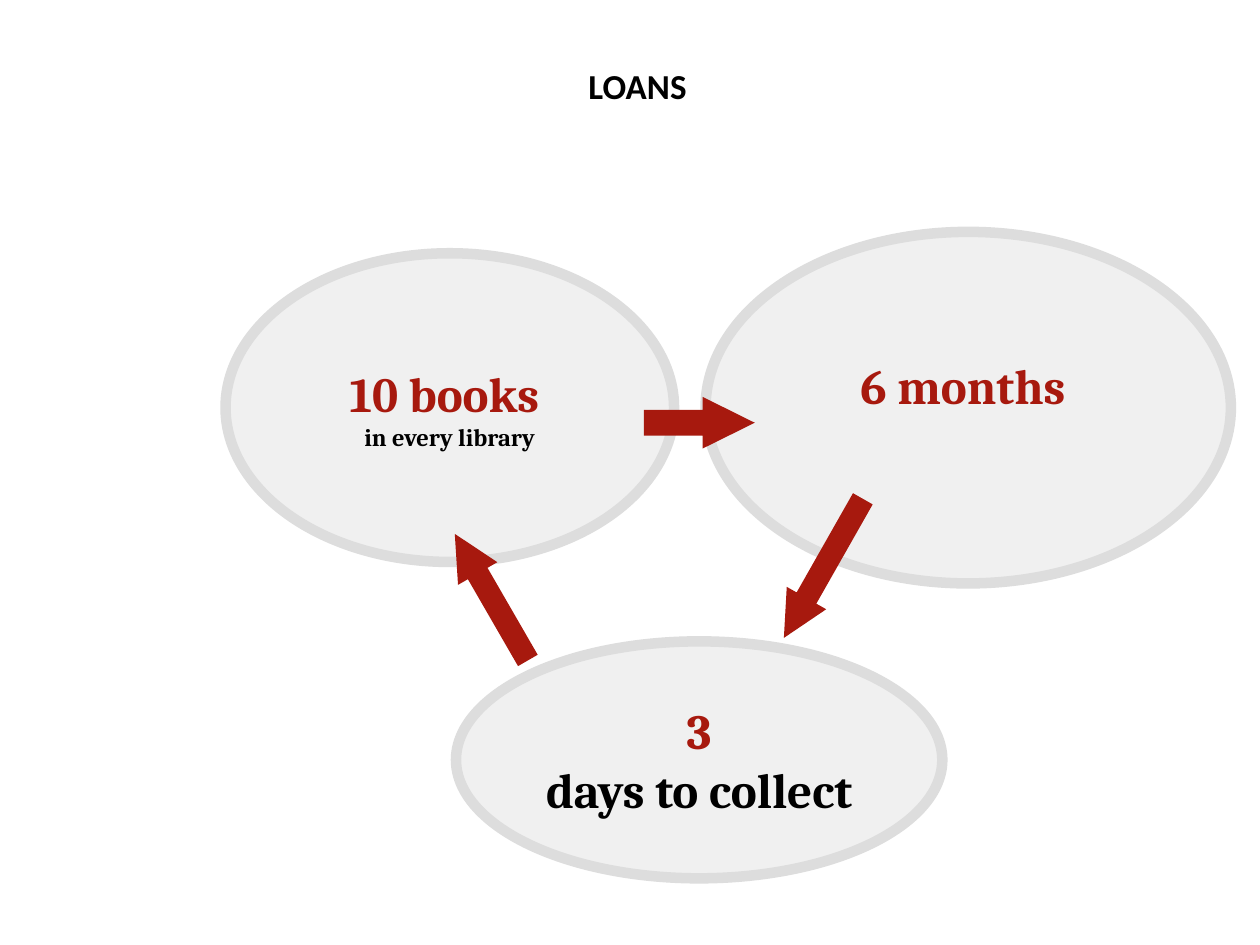
"""Build the library loans cycle slide."""
from dataclasses import dataclass

from pptx import Presentation
from pptx.dml.color import RGBColor
from pptx.enum.shapes import MSO_SHAPE as Shape
from pptx.enum.text import MSO_ANCHOR as Anchor, MSO_AUTO_SIZE as AutoSize, PP_ALIGN as Align
from pptx.slide import Slide
from pptx.util import Pt


@dataclass(frozen=True)
class Theme:
    accent: RGBColor = RGBColor(0xA7, 0x19, 0x0E)
    dark: RGBColor = RGBColor(0, 0, 0)
    fill: RGBColor = RGBColor(0xF0, 0xF0, 0xF0)
    outline: RGBColor = RGBColor(0xDD, 0xDD, 0xDD)
    outline_width: float = 6
    title_font: str = "Calibri"
    body_font: str = "Cambria"
    title_size: float = 20
    large: float = 28
    small: float = 14


@dataclass(frozen=True)
class Box:
    left: float
    top: float
    width: float
    height: float

    def lengths(self) -> tuple[Pt, Pt, Pt, Pt]:
        return Pt(self.left), Pt(self.top), Pt(self.width), Pt(self.height)


@dataclass(frozen=True)
class Line:
    text: str
    size: float
    color: RGBColor


@dataclass(frozen=True)
class Stage:
    box: Box
    lines: tuple[Line, ...]
    bottom_inset: float = 0


@dataclass(frozen=True)
class Arrow:
    box: Box
    rotation: float


THEME = Theme()

STAGES = (
    Stage(Box(128.9, 144.7, 256.3, 176.4), (
        Line("10 books ", THEME.large, THEME.accent),
        Line("in every library", THEME.small, THEME.dark))),
    Stage(Box(403.2, 132.5, 300.2, 200.9), (
        Line("6 months ", THEME.large, THEME.accent),), bottom_inset=26),
    Stage(Box(260.6, 366.5, 277.9, 135.4), (
        Line("3", THEME.large, THEME.accent),
        Line("days to collect", THEME.large, THEME.dark))),
)

ARROWS = (
    Arrow(Box(367.9, 226.8, 63.4, 29.5), 180),
    Arrow(Box(424.8, 311.8, 91.4, 25.9), 299.6),
    Arrow(Box(239, 328.3, 83.5, 25.9), 60),
)


def set_title(slide: Slide, text: str, box: Box) -> None:
    title = slide.shapes.title
    title.left, title.top, title.width, title.height = box.lengths()
    frame = title.text_frame
    frame.text = text
    frame.word_wrap = True
    frame.auto_size = AutoSize.NONE
    frame.vertical_anchor = Anchor.MIDDLE
    frame.margin_left, frame.margin_right = Pt(79.2), 0
    paragraph = frame.paragraphs[0]
    paragraph.alignment = Align.LEFT
    font = paragraph.font
    font.name, font.size, font.bold = THEME.title_font, Pt(THEME.title_size), True
    font.color.rgb = THEME.dark


def draw_stage(slide: Slide, stage: Stage) -> None:
    shape = slide.shapes.add_shape(Shape.OVAL, *stage.box.lengths())
    shape.shadow.inherit = False
    shape.fill.solid()
    shape.fill.fore_color.rgb = THEME.fill
    shape.line.color.rgb = THEME.outline
    shape.line.width = Pt(THEME.outline_width)
    frame = shape.text_frame
    frame.word_wrap = True
    frame.vertical_anchor = Anchor.MIDDLE
    frame.margin_left = frame.margin_right = frame.margin_top = 0
    frame.margin_bottom = Pt(stage.bottom_inset)
    for index, line in enumerate(stage.lines):
        paragraph = frame.add_paragraph() if index else frame.paragraphs[0]
        paragraph.text = line.text
        paragraph.alignment = Align.CENTER
        font = paragraph.font
        font.name, font.size, font.bold = THEME.body_font, Pt(line.size), True
        font.color.rgb = line.color


def draw_arrow(slide: Slide, arrow: Arrow) -> None:
    shape = slide.shapes.add_shape(Shape.LEFT_ARROW, *arrow.box.lengths())
    shape.shadow.inherit = False
    shape.rotation = arrow.rotation
    shape.adjustments[0], shape.adjustments[1] = 0.5, 1.01
    shape.fill.solid()
    shape.fill.fore_color.rgb = THEME.accent
    shape.line.fill.background()


def main() -> None:
    presentation = Presentation()
    presentation.slide_width, presentation.slide_height = Pt(720), Pt(540)
    slide = presentation.slides.add_slide(presentation.slide_layouts.get_by_name("Title Only"))
    set_title(slide, "LOANS", Box(257, 33.1, 144, 31.7))
    for stage in STAGES:
        draw_stage(slide, stage)
    for arrow in ARROWS:
        draw_arrow(slide, arrow)
    presentation.save("out.pptx")


if __name__ == "__main__":
    main()
